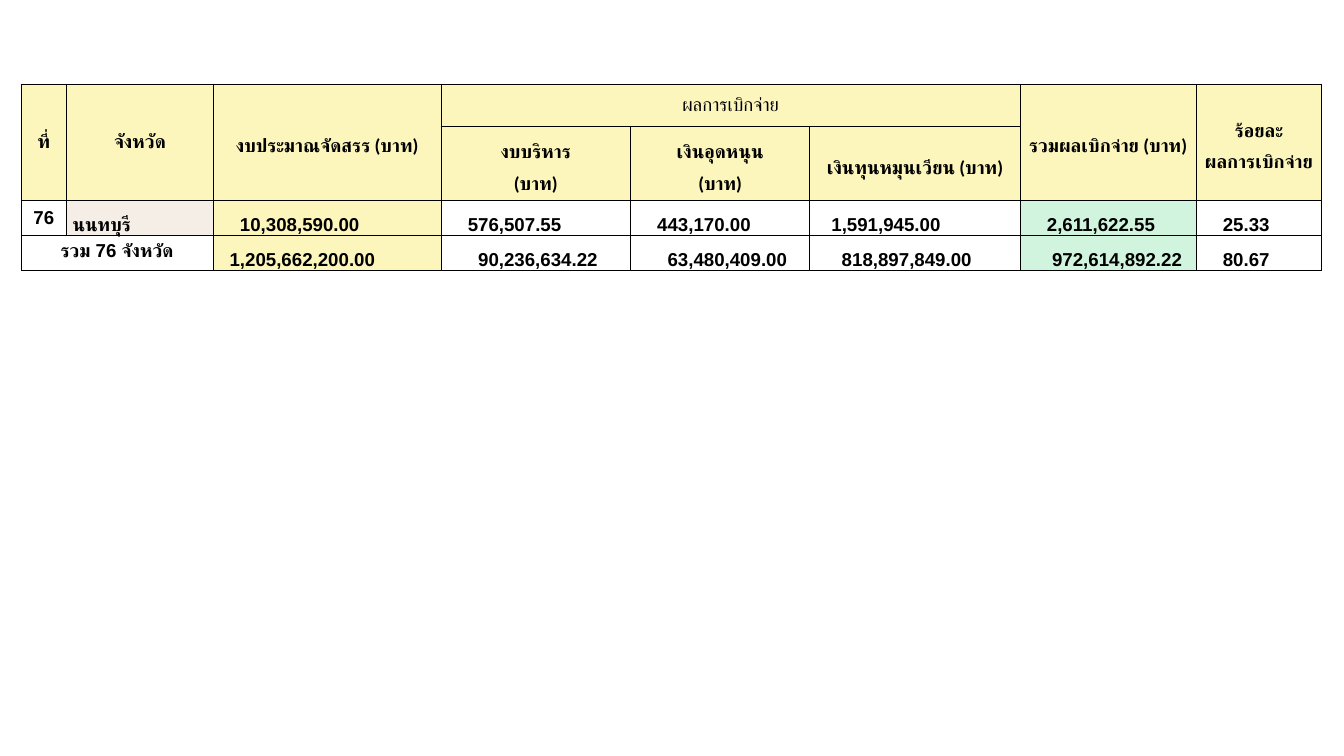
from dataclasses import dataclass
from lxml.etree import SubElement
from pptx import Presentation
from pptx.dml.color import RGBColor
from pptx.enum.text import MSO_VERTICAL_ANCHOR as Anchor, PP_PARAGRAPH_ALIGNMENT as Align
from pptx.oxml.ns import qn
from pptx.util import Cm, Pt


@dataclass(frozen=True)
class Theme:
    ink: str = "000000"
    header: str = "FCF6BD"
    province: str = "F5EEE6"
    total: str = "D0F4DE"
    header_font: str = "Calibri"
    body_font: str = "Arial"
    text_size: float = 20
    border: float = 1


theme = Theme()
SPACE_WIDTH = 0.196


def add_borders(cell):
    properties = cell._tc.get_or_add_tcPr()
    for side in ("a:lnL", "a:lnR", "a:lnT", "a:lnB"):
        line = SubElement(properties, qn(side), w=str(Pt(theme.border)))
        solid = SubElement(line, qn("a:solidFill"))
        SubElement(solid, qn("a:srgbClr"), val=theme.ink)


def write_cell(cell, text, font_name, bold, spacing, cell_format, paragraph_format):
    for name, value in cell_format.items():
        setattr(cell, name, value)
    cell.text = text
    font_format = {"name": font_name, "size": Pt(theme.text_size), "bold": bold}
    for paragraph in cell.text_frame.paragraphs:
        for name, value in paragraph_format.items():
            setattr(paragraph, name, value)
        if spacing:
            paragraph.line_spacing = Pt(spacing)
        for run in paragraph.runs:
            for name, value in font_format.items():
                setattr(run.font, name, value)
            run.font.color.rgb = RGBColor.from_string(theme.ink)
            SubElement(run._r.get_or_add_rPr(), qn("a:cs"), typeface=font_name)


presentation = Presentation()
presentation.slide_width = Cm(50.8)
presentation.slide_height = Cm(28.58)
slide = presentation.slides.add_slide(presentation.slide_layouts[6])

column_widths = [1.73, 5.54, 8.61, 7.16, 6.78, 7.95, 6.65, 4.75]
row_heights = [1.6, 2.79, 1.32, 1.32]
frame = slide.shapes.add_table(
    len(row_heights), len(column_widths), Cm(0.79), Cm(3.18),
    Cm(sum(column_widths)), Cm(sum(row_heights)),
)
table = frame.table
table.first_row = False
table.horz_banding = False
for column, width in zip(table.columns, column_widths):
    column.width = Cm(width)
for row, height in zip(table.rows, row_heights):
    row.height = Cm(height)

body_fills = {(2, 1): theme.province}
for row in (2, 3):
    body_fills[row, 2] = theme.header
    body_fills[row, 6] = theme.total
for row in range(len(row_heights)):
    for column in range(len(column_widths)):
        cell = table.cell(row, column)
        add_borders(cell)
        color = theme.header if row < 2 else body_fills.get((row, column))
        if color:
            cell.fill.solid()
            cell.fill.fore_color.rgb = RGBColor.from_string(color)
        else:
            cell.fill.background()

for column in (0, 1, 2, 6, 7):
    table.cell(0, column).merge(table.cell(1, column))
table.cell(0, 3).merge(table.cell(0, 5))
table.cell(3, 0).merge(table.cell(3, 1))

padded = {"vertical_anchor": Anchor.MIDDLE}
padded |= {f"margin_{side}": Cm(0.13) for side in ("left", "right", "top", "bottom")}
tight = {f"margin_{side}": Cm(0.03) for side in ("left", "right", "top")}
tight |= {"margin_bottom": Cm(0), "vertical_anchor": Anchor.BOTTOM}
centered = {"alignment": Align.CENTER}

headers = [
    (0, 0, "ที่", 24, True),
    (0, 1, "จังหวัด", 24, True),
    (0, 2, "งบประมาณจัดสรร (บาท)", 34, True),
    (0, 3, "ผลการเบิกจ่าย", 24, False),
    (0, 6, "รวมผลเบิกจ่าย (บาท)", 34, True),
    (0, 7, "ร้อยละ\nผลการเบิกจ่าย", 34, True),
    (1, 3, "งบบริหาร\n(บาท)", 34, True),
    (1, 4, "เงินอุดหนุน\n(บาท)", 34, True),
    (1, 5, "เงินทุนหมุนเวียน (บาท)", 34, True),
]
for row, column, text, spacing, bold in headers:
    write_cell(table.cell(row, column), text, theme.header_font, bold, spacing, padded, centered)

write_cell(table.cell(2, 0), "76", theme.body_font, True, None,
           tight | {"vertical_anchor": Anchor.MIDDLE}, centered)
write_cell(table.cell(3, 0), "รวม 76 จังหวัด", theme.body_font, True, 19.2, padded, centered)

body_rows = {
    2: [("นนทบุรี", 1), ("10,308,590.00", 5), ("576,507.55", 5), ("443,170.00", 5),
        ("1,591,945.00", 4), ("2,611,622.55", 5), ("25.33", 5)],
    3: [("1,205,662,200.00", 3), ("90,236,634.22", 7), ("63,480,409.00", 7),
        ("818,897,849.00", 6), ("972,614,892.22", 6), ("80.67", 5)],
}
for row, entries in body_rows.items():
    first_column = len(column_widths) - len(entries)
    for column, (text, indent) in enumerate(entries, first_column):
        indented = tight | {"margin_left": Cm(0.03 + indent * SPACE_WIDTH)}
        write_cell(table.cell(row, column), text, theme.body_font, True, None,
                   indented, {"alignment": Align.LEFT})

presentation.save("out.pptx")
